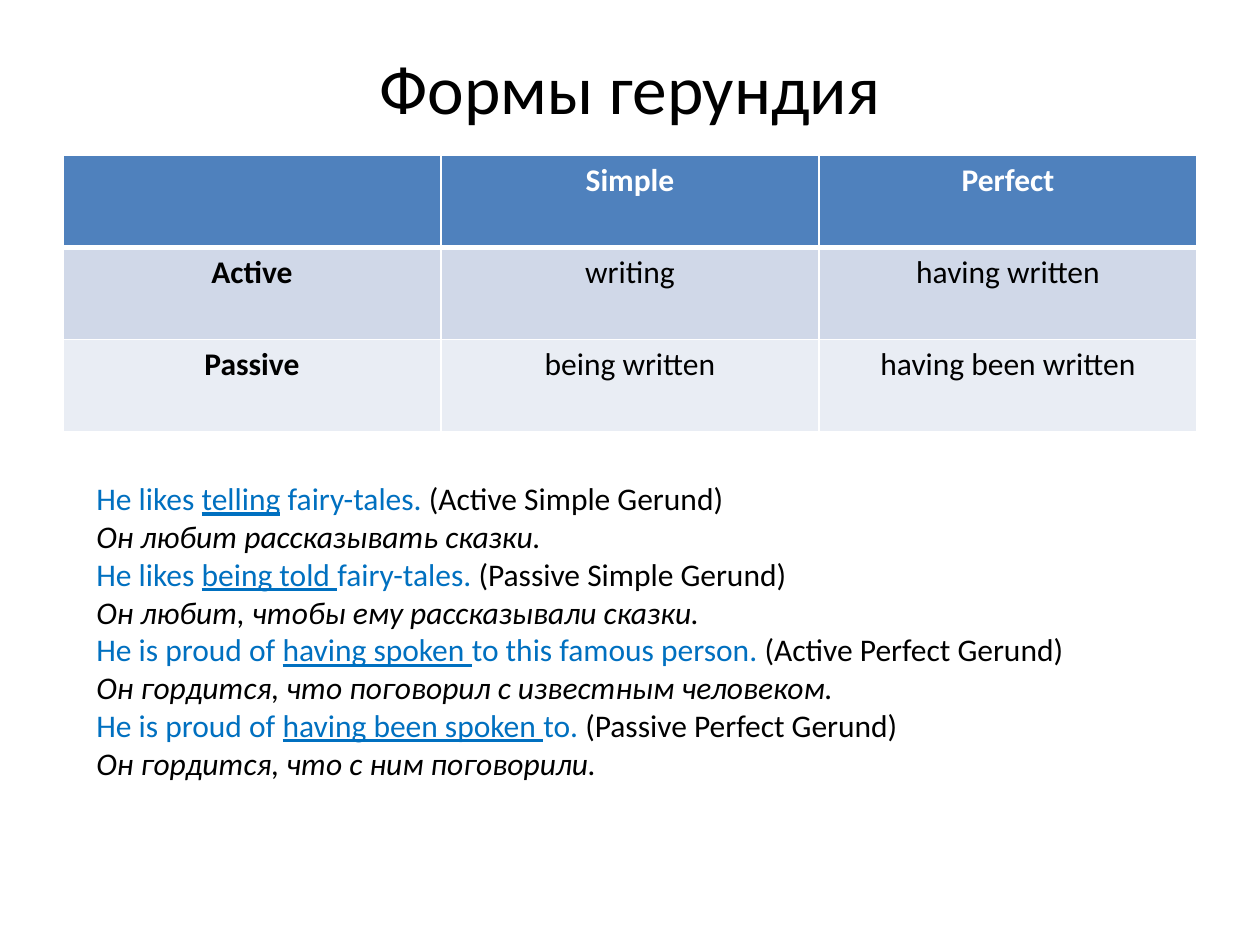
from dataclasses import dataclass

from lxml import etree
from pptx import Presentation
from pptx import util as u
from pptx.dml.color import RGBColor
from pptx.enum import text
from pptx.oxml.ns import qn

PX_PER_INCH = 126
FONT = "Calibri"
BLACK, WHITE, BLUE = "000000", "FFFFFF", "0070C0"
HEADER_FILL = "4F81BD"
BODY_FILLS = ("D0D8E8", "E9EDF4")


@dataclass(frozen=True)
class Box:
    left: int
    top: int
    width: int
    height: int

    def emu(self) -> tuple:
        return tuple(px(n) for n in (self.left, self.top, self.width, self.height))


@dataclass(frozen=True)
class Example:
    before: str
    gerund: str
    after: str
    form: str
    translation: str


TITLE_BOX = Box(63, 38, 1134, 97)
TABLE_BOX = Box(63, 155, 1134, 277)
EXAMPLES_BOX = Box(84, 473, 1111, 318)

FORMS = (
    ("", "Simple", "Perfect"),
    ("Active", "writing", "having written"),
    ("Passive", "being written", "having been written"),
)

EXAMPLES = (
    Example("He likes ", "telling", " fairy-tales. ", "(Active Simple Gerund)",
            "Он любит рассказывать сказки."),
    Example("He likes ", "being told ", "fairy-tales.", " (Passive Simple Gerund)",
            "Он любит, чтобы ему рассказывали сказки."),
    Example("He is proud of ", "having spoken ", "to this famous person. ",
            "(Active Perfect Gerund)",
            "Он гордится, что поговорил с известным человеком."),
    Example("He is proud of ", "having been spoken ", "to. ",
            "(Passive Perfect Gerund)", "Он гордится, что с ним поговорили."),
)


def px(count: int) -> int:
    return round(count * u.Inches(1) / PX_PER_INCH)


def colour(value: str) -> RGBColor:
    return RGBColor.from_string(value)


def style(span, value: str, size: float = 18, bold: bool = False,
          italic: bool = False, underline: bool = False) -> None:
    font = span.font
    font.name, font.size = FONT, u.Pt(size)
    font.bold, font.italic, font.underline = bold, italic, underline
    font.color.rgb = colour(value)


def add_span(para, words: str, value: str, **looks: bool) -> None:
    span = para.add_run()
    span.text = words
    style(span, value, **looks)


def add_frame(page, box: Box):
    frame = page.shapes.add_textbox(*box.emu()).text_frame
    frame.word_wrap = True
    return frame


def add_title(page) -> None:
    frame = add_frame(page, TITLE_BOX)
    frame.vertical_anchor = text.MSO_ANCHOR.MIDDLE
    frame.text = "Формы герундия"
    para = frame.paragraphs[0]
    para.alignment = text.PP_ALIGN.CENTER
    style(para.runs[0], BLACK, size=39.6)


def add_border(cell, side: str, points: int) -> None:
    """Draw a white cell border; call before setting the cell's fill."""
    properties = cell._tc.get_or_add_tcPr()
    line = etree.SubElement(properties, qn(f"a:ln{side}"), w=str(u.Pt(points)))
    fill = etree.SubElement(line, qn("a:solidFill"))
    etree.SubElement(fill, qn("a:srgbClr"), val=WHITE)


def add_forms_table(page) -> None:
    table = page.shapes.add_table(len(FORMS), len(FORMS[0]), *TABLE_BOX.emu()).table
    for r, words in enumerate(FORMS):
        for c, word in enumerate(words):
            cell = table.cell(r, c)
            below_header = {0: "B", 1: "T"}.get(r)
            for side in "LRTB":
                add_border(cell, side, 3 if side == below_header else 1)
            cell.fill.solid()
            cell.fill.fore_color.rgb = colour(BODY_FILLS[r - 1] if r else HEADER_FILL)
            cell.text = word
            para = cell.text_frame.paragraphs[0]
            para.alignment = text.PP_ALIGN.CENTER
            for span in para.runs:
                style(span, BLACK if r else WHITE, bold=r == 0 or c == 0)


def add_examples(page) -> None:
    frame = add_frame(page, EXAMPLES_BOX)
    frame.auto_size = text.MSO_AUTO_SIZE.SHAPE_TO_FIT_TEXT
    for index, example in enumerate(EXAMPLES):
        para = frame.add_paragraph() if index else frame.paragraphs[0]
        add_span(para, example.before, BLUE)
        add_span(para, example.gerund, BLUE, underline=True)
        add_span(para, example.after, BLUE)
        add_span(para, example.form, BLACK)
        add_span(frame.add_paragraph(), example.translation, BLACK, italic=True)


def main() -> None:
    deck = Presentation()
    deck.slide_width, deck.slide_height = u.Inches(10), u.Inches(7.5)
    page = deck.slides.add_slide(deck.slide_layouts[6])
    add_title(page)
    add_forms_table(page)
    add_examples(page)
    deck.save("out.pptx")


if __name__ == "__main__":
    main()
